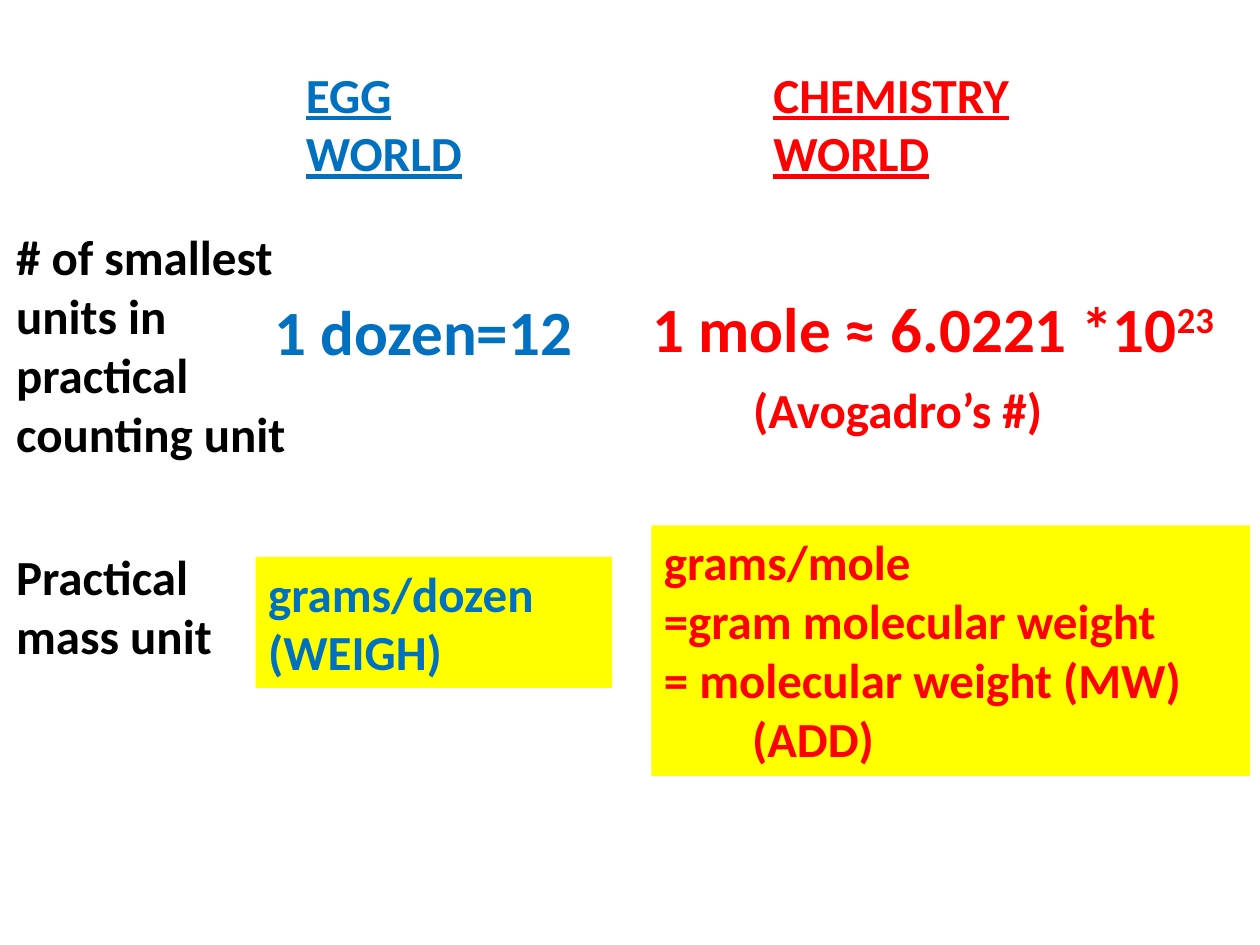
from pptx import Presentation
from pptx import util as u
from pptx.dml.color import RGBColor
from pptx.enum import shapes, text

THEME = {
    "font": "Calibri",
    "egg": "0070C0",
    "chemistry": "FF0000",
    "label": "000000",
    "highlight": "FFFF00",
    "body": 28,
    "large": 36,
}

HEADINGS = [
    ("EGG WORLD", "egg", (2.33, 0.46, 1.67, 1.04)),
    ("CHEMISTRY WORLD", "chemistry", (6.04, 0.46, 2.25, 1.04)),
]
ROW_LABELS = [
    ("Practical mass unit", (0.03, 4.29, 2.25, 1.04)),
    ("# of smallest units in practical counting unit", (0.03, 1.75, 2.67, 1.99)),
]
COUNTS = [
    ("1 dozen=12", "", "egg", (2.08, 2.27, 2.67, 0.71)),
    ("1 mole ≈ 6.0221 *10", "23", "chemistry", (5.08, 2.25, 4.92, 0.71)),
]
AVOGADRO = ("(Avogadro’s #)", "chemistry", (5.88, 2.96, 3.17, 0.57))
MASS_UNITS = [
    (["grams/dozen", "(WEIGH)"], "egg", (2.03, 4.42, 2.83, 1.04), 0),
    (["grams/mole", "=gram molecular weight", "= molecular weight (MW)", "(ADD)"],
     "chemistry", (5.17, 4.17, 4.75, 1.99), 0.7),
]


def add_text(page, lines, area, color, size="body", underline=None,
             exponent="", fill=None, last_indent=0):
    place = [u.Inches(value) for value in area]
    if fill:
        box = page.shapes.add_shape(shapes.MSO_SHAPE.RECTANGLE, *place)
        box.shadow.inherit = False
        box.fill.solid()
        box.fill.fore_color.rgb = RGBColor.from_string(THEME[fill])
        box.line.fill.background()
    else:
        box = page.shapes.add_textbox(*place)
    frame = box.text_frame
    frame.word_wrap = True
    frame.auto_size = text.MSO_AUTO_SIZE.SHAPE_TO_FIT_TEXT
    frame.vertical_anchor = text.MSO_ANCHOR.TOP
    for index, line in enumerate(lines):
        para = frame.add_paragraph() if index else frame.paragraphs[0]
        para.alignment = text.PP_ALIGN.LEFT
        for part in filter(None, (line, exponent)):
            span = para.add_run()
            span.text = part
            span.font.name = THEME["font"]
            span.font.size = u.Pt(THEME[size])
            span.font.bold = True
            span.font.underline = underline
            span.font.color.rgb = RGBColor.from_string(THEME[color])
        if exponent:
            span._r.get_or_add_rPr().set("baseline", "30000")
    if last_indent:
        para._p.get_or_add_pPr().set("marL", str(u.Inches(last_indent)))


def main():
    deck = Presentation()
    deck.slide_width, deck.slide_height = u.Inches(10), u.Inches(7.5)
    page = deck.slides.add_slide(deck.slide_layouts[6])

    for words, color, area in HEADINGS:
        add_text(page, [words], area, color, underline=True)
    for lines, color, area, indent in MASS_UNITS:
        add_text(page, lines, area, color, fill="highlight", last_indent=indent)
    for words, area in ROW_LABELS:
        add_text(page, [words], area, "label")
    for words, exponent, color, area in COUNTS:
        add_text(page, [words], area, color, size="large", exponent=exponent)
    words, color, area = AVOGADRO
    add_text(page, [words], area, color)

    deck.save("out.pptx")


if __name__ == "__main__":
    main()
